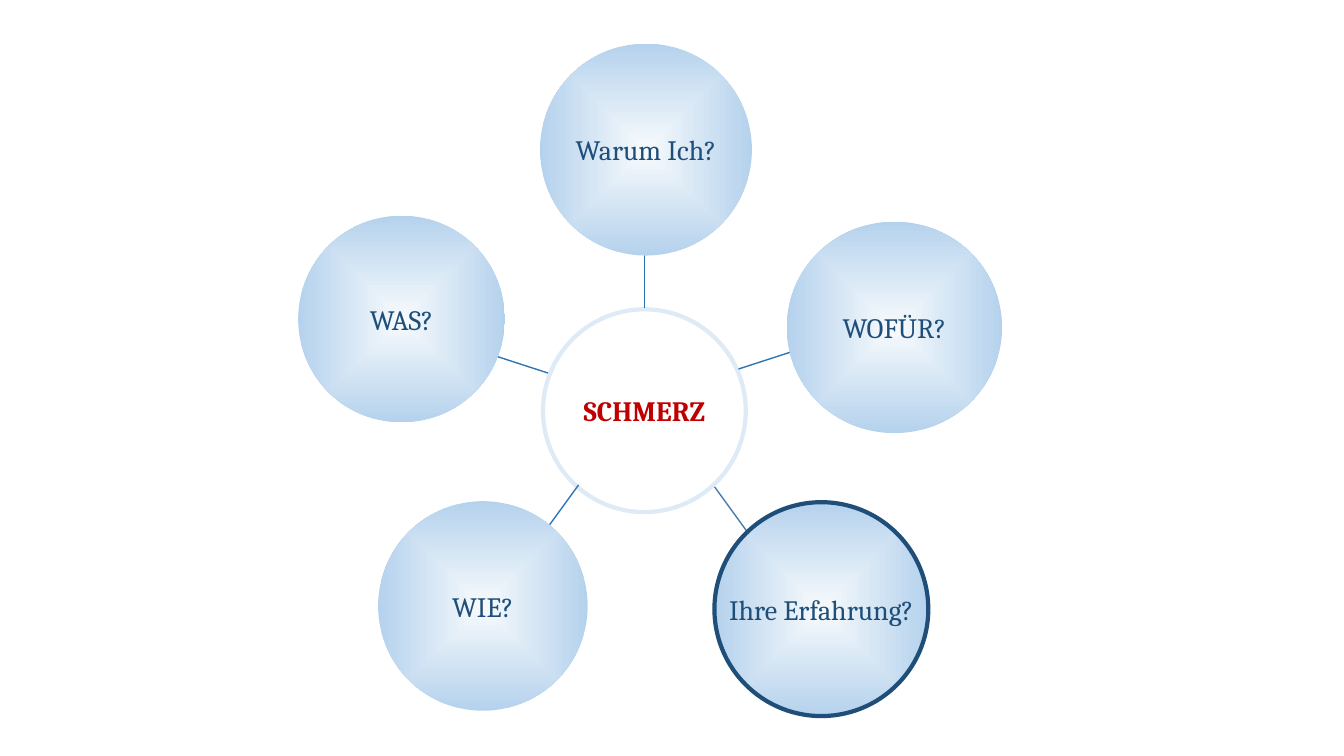
import math
from dataclasses import dataclass

import lxml.etree
import pptx
import pptx.dml.color
import pptx.enum.shapes
import pptx.enum.text
import pptx.oxml
import pptx.oxml.ns
import pptx.util

Cm = pptx.util.Cm


@dataclass(frozen=True)
class Theme:
    """Colours, font and sizes of the slide."""
    font: str = "Cambria"
    size: int = 20
    outline: int = 3
    spoke_width: int = 1
    text: str = "1F4E79"
    accent: str = "C00000"
    hub: str = "FFFFFF"
    ring: str = "DEEBF7"
    spoke: str = "2E75B6"
    spoke_muted: str = "497CAB"
    inner: str = "F7FAFD"
    outer: str = "B5D2EC"


THEME = Theme()
SPOKE_LENGTH = 1.4
HUB_SIZE = 5.11

# label, centre offset, size, spoke start offset, outline, spoke colour
QUESTIONS = [
    ("Warum Ich?", (0.04, -6.58), (5.34, 5.34), (0, -2.58), None, THEME.spoke),
    ("WOFÜR?", (6.3, -2.1), (5.43, 5.33), (2.37, -1.05), None, THEME.spoke),
    ("Ihre Erfahrung?", (4.46, 5), (5.39, 5.39), (1.77, 1.92), THEME.text,
     THEME.spoke_muted),
    ("WIE?", (-4.07, 4.92), (5.28, 5.28), (-1.66, 1.87), None, THEME.spoke),
    ("WAS?", (-6.12, -2.31), (5.21, 5.21), (-2.43, -0.95), None, THEME.spoke),
]


def rgb(value):
    """Return a colour object for a hex string."""
    return pptx.dml.color.RGBColor.from_string(value)


def add_text(sp, text, color=THEME.text, bold=False, size=THEME.size):
    """Write one centred line of formatted text into a shape."""
    tf = sp.text_frame
    tf.word_wrap = False
    tf.margin_left = tf.margin_right = tf.margin_top = tf.margin_bottom = 0
    tf.vertical_anchor = pptx.enum.text.MSO_ANCHOR.MIDDLE
    p = tf.paragraphs[0]
    p.alignment = pptx.enum.text.PP_ALIGN.CENTER
    r = p.add_run()
    r.text = text
    r.font.name = THEME.font
    r.font.size = pptx.util.Pt(size)
    r.font.bold = bold
    r.font.color.rgb = rgb(color)


def fill_from_centre(sp):
    """Fill a shape with a gradient that starts at its centre."""
    ns = pptx.oxml.ns.nsdecls("a")
    grad = pptx.oxml.parse_xml(
        f'<a:gradFill {ns} rotWithShape="1"><a:gsLst>'
        f'<a:gs pos="0"><a:srgbClr val="{THEME.inner}"/></a:gs>'
        f'<a:gs pos="100000"><a:srgbClr val="{THEME.outer}"/></a:gs></a:gsLst>'
        '<a:path path="shape"><a:fillToRect l="50000" t="50000" r="50000" b="50000"/>'
        '</a:path></a:gradFill>')
    sp.fill.background()
    old = sp.element.spPr.find(pptx.oxml.ns.qn("a:noFill"))
    sp.element.spPr.replace(old, grad)


def add_circle(s, centre, size, outline=None):
    """Add an oval around a centre point, with an optional outline."""
    (x, y), (w, h) = centre, size
    sp = s.shapes.add_shape(pptx.enum.shapes.MSO_SHAPE.OVAL,
                            Cm(x - w / 2), Cm(y - h / 2), Cm(w), Cm(h))
    sp.shadow.inherit = False
    if outline:
        sp.line.color.rgb = rgb(outline)
        sp.line.width = pptx.util.Pt(THEME.outline)
    else:
        sp.line.fill.background()
    return sp


def add_spoke(s, start, angle, color):
    """Add a spoke of fixed length from a start point at an angle."""
    x, y = start
    cx = s.shapes.add_connector(
        pptx.enum.shapes.MSO_CONNECTOR.STRAIGHT, Cm(x), Cm(y),
        Cm(x + SPOKE_LENGTH * math.cos(angle)),
        Cm(y + SPOKE_LENGTH * math.sin(angle)))
    cx.line.color.rgb = rgb(color)
    cx.line.width = pptx.util.Pt(THEME.spoke_width)
    lxml.etree.SubElement(cx.element.spPr, pptx.oxml.ns.qn("a:effectLst"))


def add_wheel(s, left, top, width, height):
    """Place the hub in the middle of a box and the questions around it."""
    x, y = left + width / 2, top + height / 2
    hub = add_circle(s, (x, y), (HUB_SIZE, HUB_SIZE), THEME.ring)
    hub.fill.solid()
    hub.fill.fore_color.rgb = rgb(THEME.hub)
    add_text(hub, "SCHMERZ", color=THEME.accent, bold=True)
    for i, (label, (dx, dy), size, (sx, sy), outline, color) in enumerate(QUESTIONS):
        add_spoke(s, (x + sx, y + sy), math.radians(72 * i - 90), color)
        sp = add_circle(s, (x + dx, y + dy), size, outline)
        fill_from_centre(sp)
        add_text(sp, label)


def main():
    """Build the slide and save it."""
    prs = pptx.Presentation()
    prs.slide_width, prs.slide_height = Cm(33.87), Cm(19.05)
    s = prs.slides.add_slide(prs.slide_layouts[6])
    add_wheel(s, left=7.24, top=1.35, width=18, height=18)
    prs.save("out.pptx")


if __name__ == "__main__":
    main()
